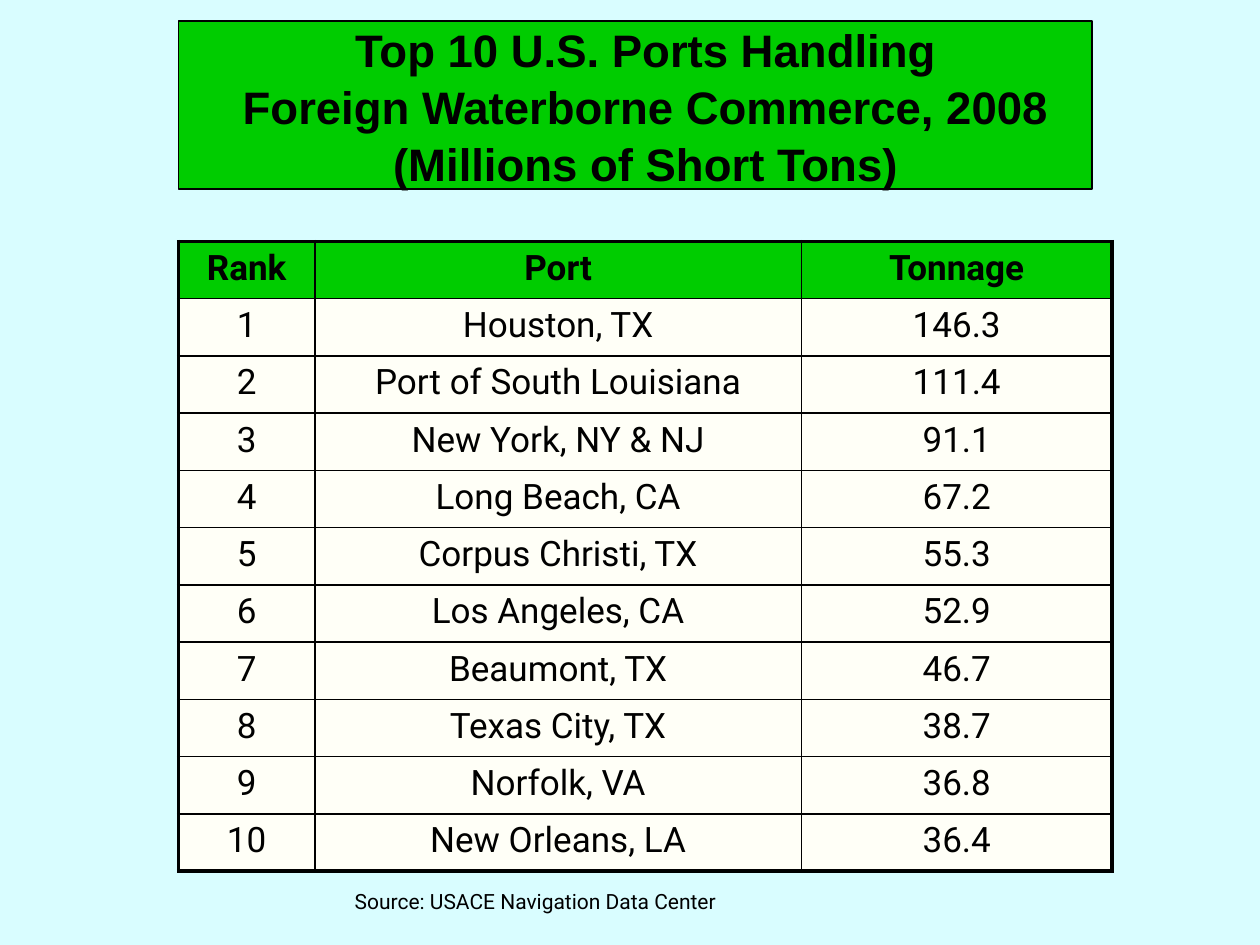
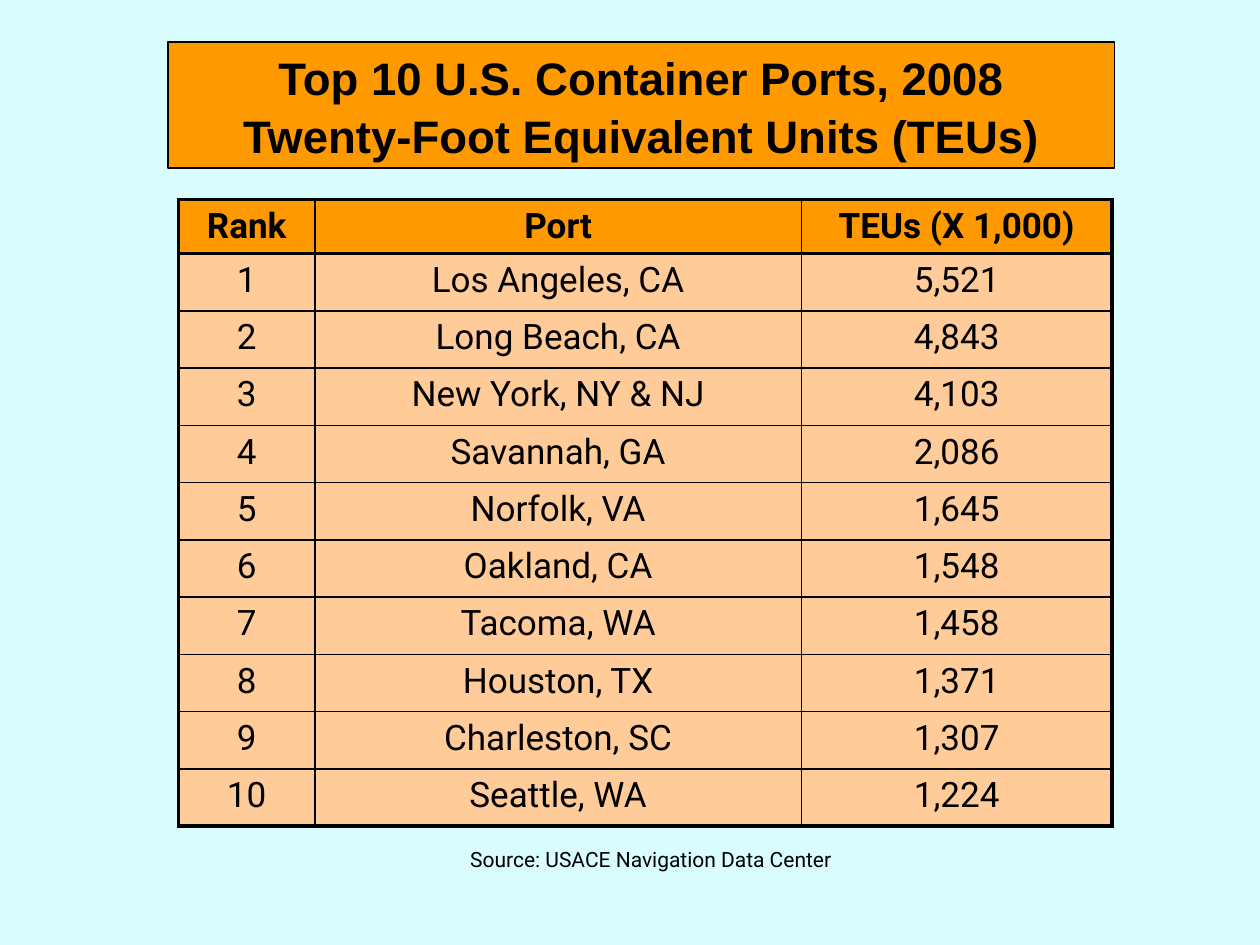
from dataclasses import dataclass

from lxml import etree
from pptx import Presentation
from pptx.dml.color import RGBColor
from pptx.enum.shapes import MSO_SHAPE
from pptx.enum.text import MSO_ANCHOR, MSO_AUTO_SIZE, PP_ALIGN
from pptx.oxml.ns import qn
from pptx.util import Pt

RECTANGLE = MSO_SHAPE.RECTANGLE
MIDDLE = MSO_ANCHOR.MIDDLE
NO_AUTOFIT = MSO_AUTO_SIZE.NONE
CENTER = PP_ALIGN.CENTER

BACKGROUND = "D9FDFF"
BLACK = "000000"
TITLE_FONT = "Arial"
BODY_FONT = "Roboto"

TITLE_ONLY_LAYOUT = 5
TABLE_LEFT = 102
COLUMN_WIDTHS = (78, 278, 177.5)
ROW_HEIGHT = 32.73
THIN, THICK = 1, 2.25
SOURCE = "Source: USACE Navigation Data Center"


@dataclass(frozen=True)
class Frame:
    """A rectangle on the slide, in points."""
    left: float
    top: float
    width: float
    height: float

    def lengths(self) -> tuple:
        return Pt(self.left), Pt(self.top), Pt(self.width), Pt(self.height)


@dataclass(frozen=True)
class RankingSlide:
    title: str
    title_frame: Frame
    banner_frame: Frame
    banner_line: float
    accent: str
    body_fill: str
    table_top: float
    header_height: float
    header_rule: float
    measure: str
    ports: tuple
    source_frame: Frame


SLIDES = (
    RankingSlide(
        title="Top 10 U.S. Ports Handling\v"
              "Foreign Waterborne Commerce, 2008\v"
              "(Millions of Short Tons)",
        title_frame=Frame(96, 12, 546, 96),
        banner_frame=Frame(102, 12, 522, 96),
        banner_line=1,
        accent="00CC00",
        body_fill="FFFFF7",
        table_top=138,
        header_height=ROW_HEIGHT,
        header_rule=THIN,
        measure="Tonnage",
        ports=(
            ("Houston, TX", "146.3"),
            ("Port of South Louisiana", "111.4"),
            ("New York, NY & NJ", "91.1"),
            ("Long Beach, CA", "67.2"),
            ("Corpus Christi, TX", "55.3"),
            ("Los Angeles, CA", "52.9"),
            ("Beaumont, TX", "46.7"),
            ("Texas City, TX", "38.7"),
            ("Norfolk, VA", "36.8"),
            ("New Orleans, LA", "36.4"),
        ),
        source_frame=Frame(114, 504, 384, 21.8),
    ),
    RankingSlide(
        title="Top 10 U.S. Container Ports, 2008\v"
              "Twenty-Foot Equivalent Units (TEUs)",
        title_frame=Frame(96, 24, 541, 72),
        banner_frame=Frame(96, 24, 541, 72),
        banner_line=0.75,
        accent="FF9900",
        body_fill="FFCC99",
        table_top=114,
        header_height=30.9,
        header_rule=THICK,
        measure="TEUs (X 1,000)",
        ports=(
            ("Los Angeles, CA", "5,521"),
            ("Long Beach, CA", "4,843"),
            ("New York, NY & NJ", "4,103"),
            ("Savannah, GA", "2,086"),
            ("Norfolk, VA", "1,645"),
            ("Oakland, CA", "1,548"),
            ("Tacoma, WA", "1,458"),
            ("Houston, TX", "1,371"),
            ("Charleston, SC", "1,307"),
            ("Seattle, WA", "1,224"),
        ),
        source_frame=Frame(180, 480, 384, 21.8),
    ),
)


def paint(color_format, color: str) -> None:
    color_format.rgb = RGBColor.from_string(color)


def fill_solid(fill, color: str) -> None:
    fill.solid()
    paint(fill.fore_color, color)


def write(text_frame, text: str, font_name: str, size: float, bold: bool = False):
    """Put one centred black paragraph in the frame and return it."""
    text_frame.text = text
    para = text_frame.paragraphs[0]
    para.alignment = CENTER
    font = para.font
    font.name, font.size, font.bold = font_name, Pt(size), bold
    paint(font.color, BLACK)
    return para


def add_border(cell, side: str, width: float) -> None:
    line = etree.SubElement(cell._tc.get_or_add_tcPr(), qn(f"a:ln{side}"), w=str(Pt(width)))
    solid = etree.SubElement(line, qn("a:solidFill"))
    etree.SubElement(solid, qn("a:srgbClr"), val=BLACK)


def add_title(page, ranking: RankingSlide) -> None:
    """Place the title over its coloured banner."""
    title = page.shapes.title
    title.left, title.top, title.width, title.height = ranking.title_frame.lengths()
    frame = title.text_frame
    frame.auto_size = NO_AUTOFIT
    frame.vertical_anchor = MIDDLE
    write(frame, ranking.title, TITLE_FONT, 26, bold=True).line_spacing = 1.05

    banner = title
    if ranking.banner_frame != ranking.title_frame:
        banner = page.shapes.add_shape(RECTANGLE, *ranking.banner_frame.lengths())
        banner.shadow.inherit = False
        title._element.addprevious(banner._element)
    fill_solid(banner.fill, ranking.accent)
    paint(banner.line.color, BLACK)
    banner.line.width = Pt(ranking.banner_line)


def add_ranking_table(page, ranking: RankingSlide) -> None:
    rows = [("Rank", "Port", ranking.measure)]
    rows += [(str(rank), *port) for rank, port in enumerate(ranking.ports, 1)]
    heights = [ranking.header_height] + [ROW_HEIGHT] * len(ranking.ports)
    rules = [THICK, ranking.header_rule] + [THIN] * (len(rows) - 2) + [THICK]
    uprights = [THICK, THIN, THIN, THICK]

    frame = Frame(TABLE_LEFT, ranking.table_top, sum(COLUMN_WIDTHS), sum(heights))
    table = page.shapes.add_table(len(rows), len(COLUMN_WIDTHS), *frame.lengths()).table
    table.horz_banding = False
    for column, width in zip(table.columns, COLUMN_WIDTHS):
        column.width = Pt(width)
    for row, height in zip(table.rows, heights):
        row.height = Pt(height)

    for i, values in enumerate(rows):
        is_header = i == 0
        for j, value in enumerate(values):
            cell = table.cell(i, j)
            write(cell.text_frame, value, BODY_FONT, 20, bold=is_header)
            add_border(cell, "L", uprights[j])
            add_border(cell, "R", uprights[j + 1])
            add_border(cell, "T", rules[i])
            add_border(cell, "B", rules[i + 1])
            fill_solid(cell.fill, ranking.accent if is_header else ranking.body_fill)


def add_source(page, frame: Frame) -> None:
    box = page.shapes.add_textbox(*frame.lengths())
    box.text_frame.word_wrap = True
    write(box.text_frame, SOURCE, BODY_FONT, 12)


def main() -> None:
    deck = Presentation()
    deck.slide_width, deck.slide_height = Pt(720), Pt(540)
    fill_solid(deck.slide_master.background.fill, BACKGROUND)
    for ranking in SLIDES:
        page = deck.slides.add_slide(deck.slide_layouts[TITLE_ONLY_LAYOUT])
        add_title(page, ranking)
        add_ranking_table(page, ranking)
        add_source(page, ranking.source_frame)
    deck.save("out.pptx")


if __name__ == "__main__":
    main()
